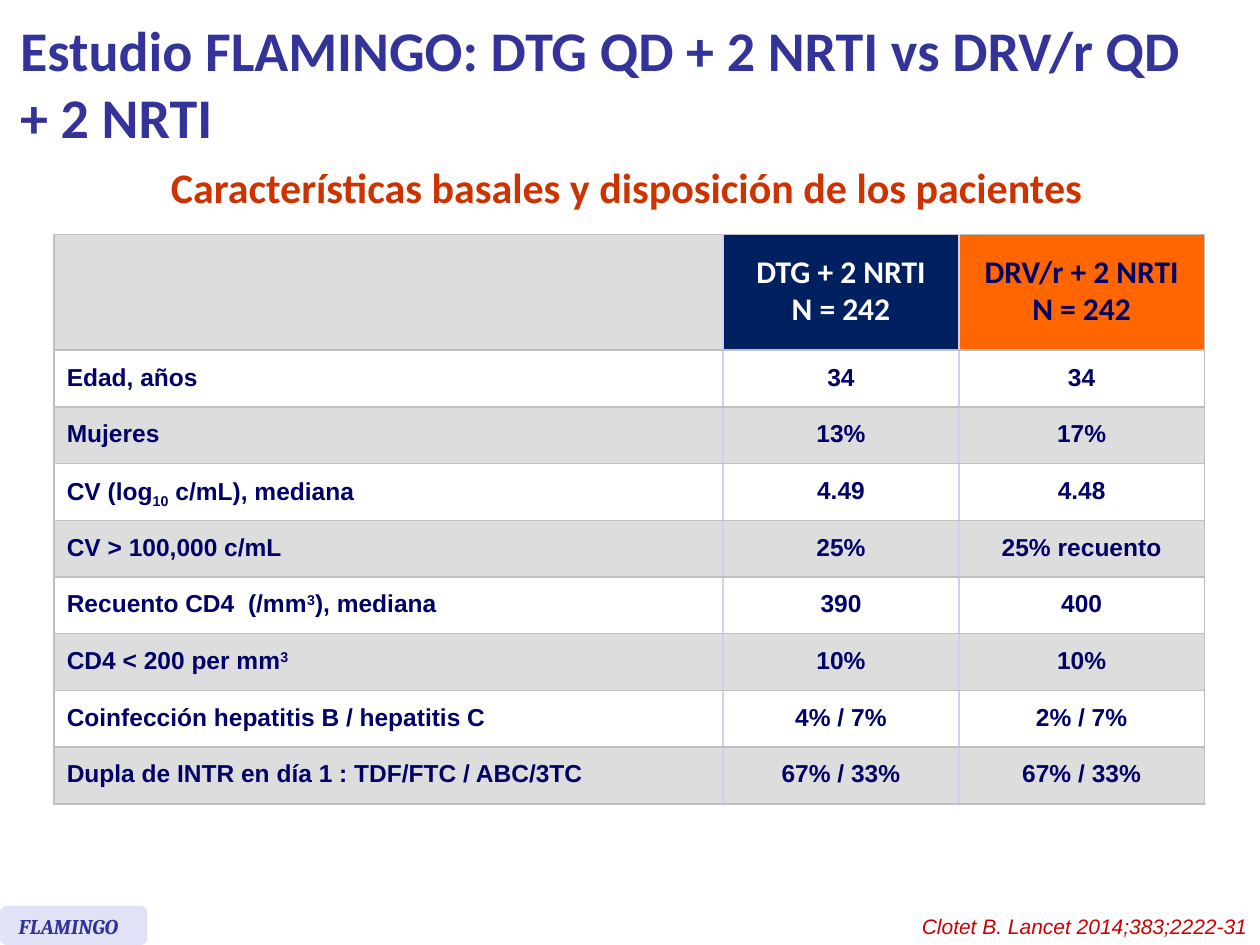
from dataclasses import dataclass
from lxml import etree
from pptx import Presentation
from pptx import util as u
from pptx.dml.color import RGBColor
from pptx.enum import shapes, text
from pptx.oxml import ns

COLORS = {
    "white": "FFFFFF", "grey": "DDDDDD", "navy": "002060", "orange": "FF6600",
    "ink": "000066", "title": "333399", "subtitle": "CC3300", "source": "CC0000",
    "badge": "E2E2F6", "line": "C0C0C0", "divider": "D0D0F0",
}
LEFT, CENTER, RIGHT = text.PP_ALIGN.LEFT, text.PP_ALIGN.CENTER, text.PP_ALIGN.RIGHT


@dataclass(frozen=True)
class Style:
    font: str
    size: float
    color: str
    bold: bool = True
    italic: bool = False


@dataclass(frozen=True)
class Run:
    words: str
    baseline: int = 0


@dataclass(frozen=True)
class Row:
    label: tuple[Run, ...]
    dtg: str
    drv: str


@dataclass(frozen=True)
class Label:
    words: str
    box: tuple[float, float, float, float]
    align: int
    style: Style
    line_spacing: float | None = None


BODY = Style("Arial", 14, "ink")
ROWS = [
    Row((Run("Edad, años"),), "34", "34"),
    Row((Run("Mujeres"),), "13%", "17%"),
    Row((Run("CV (log"), Run("10", -25000), Run(" c/mL), mediana")), "4.49", "4.48"),
    Row((Run("CV > 100,000 c/mL"),), "25%", "25% recuento"),
    Row((Run("Recuento CD4  (/mm"), Run("3", 30000), Run("), mediana")), "390", "400"),
    Row((Run("CD4 < 200 per mm"), Run("3", 30000)), "10%", "10%"),
    Row((Run("Coinfección hepatitis B / hepatitis C"),), "4% / 7%", "2% / 7%"),
    Row((Run("Dupla de INTR en día 1 : TDF/FTC / ABC/3TC"),), "67% / 33%", "67% / 33%"),
]
HEADERS = [("DTG + 2 NRTI", "navy", "white"), ("DRV/r + 2 NRTI", "orange", "ink")]
COLUMN_WIDTHS = [5.31, 1.87, 1.95]
HEADER_HEIGHT, ROW_HEIGHT = 0.92, 0.45
LABELS = [
    Label("Características basales y disposición de los pacientes", (1.06, 1.42, 7.83, 0.35),
          CENTER, Style("Calibri", 24, "subtitle"), 15.2),
    Label("Clotet B. Lancet 2014;383;2222-31", (7, 7.2, 3, 0.3),
          RIGHT, Style("Arial", 12, "source", bold=False, italic=True)),
    Label("FLAMINGO", (0.05, 7.2, 1.12, 0.3),
          LEFT, Style("Cambria", 12, "title", italic=True)),
]


def rgb(name: str) -> RGBColor:
    return RGBColor.from_string(COLORS[name])


def inches(box: tuple) -> list:
    return [u.Inches(length) for length in box]


def add_run(paragraph, piece: Run, style: Style) -> None:
    run = paragraph.add_run()
    run.text = piece.words
    font = run.font
    font.name, font.size = style.font, u.Pt(style.size)
    font.bold, font.italic = style.bold, style.italic
    font.color.rgb = rgb(style.color)
    if piece.baseline:
        run._r.get_or_add_rPr().set("baseline", str(piece.baseline))


def format_cell(cell, fill: str, first: bool, last: bool) -> None:
    cell.vertical_anchor = text.MSO_ANCHOR.MIDDLE
    cell.fill.solid()
    cell.fill.fore_color.rgb = rgb(fill)
    borders = [("lnL", "line" if first else "divider"), ("lnR", "line" if last else "divider"),
               ("lnT", "line"), ("lnB", "line")]
    properties = cell._tc.get_or_add_tcPr()
    for position, (tag, color) in enumerate(borders):
        line = etree.Element(ns.qn(f"a:{tag}"), w=str(u.Pt(1)))
        solid = etree.SubElement(line, ns.qn("a:solidFill"))
        etree.SubElement(solid, ns.qn("a:srgbClr"), val=COLORS[color])
        properties.insert(position, line)


def write_cell(cell, lines: list[tuple[Run, ...]], align: int, style: Style, spacing: float) -> None:
    for index, pieces in enumerate(lines):
        paragraph = cell.text_frame.add_paragraph() if index else cell.text_frame.paragraphs[0]
        paragraph.alignment = align
        paragraph.line_spacing = spacing
        if index:
            paragraph.space_before = u.Pt(style.size * 0.2)
        for piece in pieces:
            add_run(paragraph, piece, style)


def add_baseline_table(slide) -> None:
    height = HEADER_HEIGHT + ROW_HEIGHT * len(ROWS)
    frame = slide.shapes.add_table(len(ROWS) + 1, len(COLUMN_WIDTHS),
                                   *inches((0.43, 1.86, sum(COLUMN_WIDTHS), height)))
    table = frame.table
    table.first_row = table.horz_banding = False
    for column, width in zip(table.columns, COLUMN_WIDTHS):
        column.width = u.Inches(width)
    for index, row in enumerate(table.rows):
        row.height = u.Inches(ROW_HEIGHT if index else HEADER_HEIGHT)
        for column, cell in enumerate(row.cells):
            fill = "white" if index % 2 else "grey"
            if index == 0 and column:
                fill = HEADERS[column - 1][1]
            format_cell(cell, fill, column == 0, column == len(COLUMN_WIDTHS) - 1)
    for column, (name, _, color) in enumerate(HEADERS, 1):
        write_cell(table.cell(0, column), [(Run(name),), (Run("N = 242"),)],
                   CENTER, Style("Calibri", 18, color), 0.8)
    for index, row in enumerate(ROWS, 1):
        write_cell(table.cell(index, 0), [row.label], LEFT, BODY, 0.9)
        for column, value in enumerate((row.dtg, row.drv), 1):
            write_cell(table.cell(index, column), [(Run(value),)], CENTER, BODY, 0.9)


def add_label(slide, label: Label) -> None:
    frame = slide.shapes.add_textbox(*inches(label.box)).text_frame
    frame.word_wrap = True
    paragraph = frame.paragraphs[0]
    paragraph.alignment = label.align
    if label.line_spacing:
        paragraph.line_spacing = u.Pt(label.line_spacing)
    add_run(paragraph, Run(label.words), label.style)


def add_badge(slide) -> None:
    badge = slide.shapes.add_shape(shapes.MSO_SHAPE.ROUNDED_RECTANGLE,
                                   *inches((0, 7.19, 1.17, 0.31)))
    badge.shadow.inherit = False
    badge.fill.solid()
    badge.fill.fore_color.rgb = rgb("badge")
    badge.line.fill.background()


def write_title(slide) -> None:
    title = slide.shapes.title
    title.left, title.top, title.width, title.height = inches((0.06, 0.05, 9.55, 1.21))
    frame = title.text_frame
    frame.word_wrap = True
    frame.auto_size = text.MSO_AUTO_SIZE.NONE
    frame.vertical_anchor = text.MSO_ANCHOR.MIDDLE
    paragraph = frame.paragraphs[0]
    paragraph.alignment = LEFT
    style = Style("Calibri", 32, "title")
    add_run(paragraph, Run("Estudio FLAMINGO: DTG QD + 2 NRTI vs DRV/r QD"), style)
    paragraph.add_line_break()
    add_run(paragraph, Run("+ 2 NRTI"), style)


def main() -> None:
    presentation = Presentation()
    presentation.slide_width, presentation.slide_height = u.Inches(10), u.Inches(7.5)
    slide = presentation.slides.add_slide(presentation.slide_layouts.get_by_name("Title Only"))
    write_title(slide)
    add_baseline_table(slide)
    add_badge(slide)
    for label in LABELS:
        add_label(slide, label)
    presentation.save("out.pptx")


if __name__ == "__main__":
    main()
